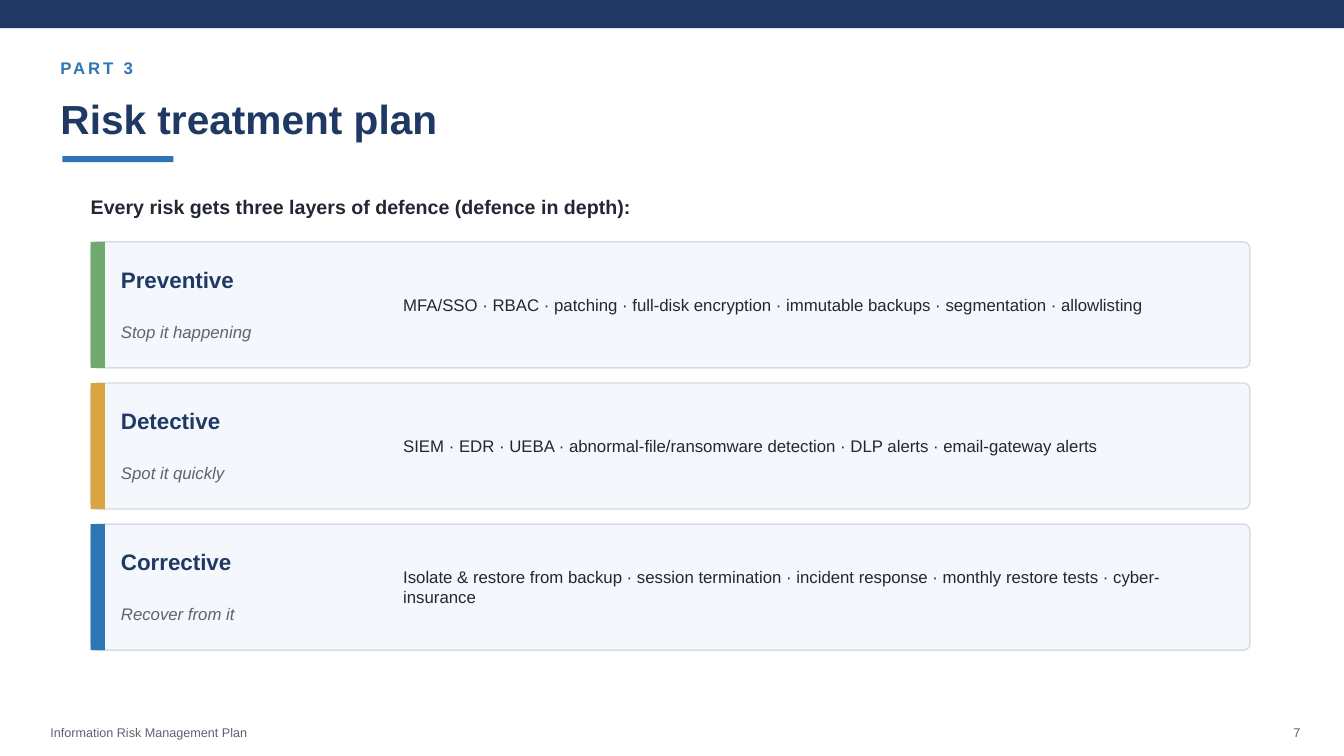
"""Build the risk treatment plan slide with its three layers of defence."""
import pptx
import pptx.dml.color
import pptx.enum.shapes
import pptx.enum.text
import pptx.util

Pt = pptx.util.Pt
RGBColor = pptx.dml.color.RGBColor
MSO_SHAPE = pptx.enum.shapes.MSO_SHAPE
PP_ALIGN = pptx.enum.text.PP_ALIGN

NAVY = RGBColor(0x1F, 0x38, 0x64)
BLUE = RGBColor(0x2E, 0x75, 0xB6)
GREEN = RGBColor(0x6F, 0xA9, 0x6B)
AMBER = RGBColor(0xD9, 0xA4, 0x41)
INK = RGBColor(0x22, 0x28, 0x33)
GREY = RGBColor(0x5B, 0x64, 0x72)
CARD_FILL = RGBColor(0xF4, 0xF7, 0xFC)
CARD_LINE = RGBColor(0xD5, 0xDC, 0xE6)

deck = pptx.Presentation()
deck.slide_width, deck.slide_height = Pt(960), Pt(540)
slide = deck.slides.add_slide(deck.slide_layouts[6])


def add_block(kind, left, top, width, height, fill):
    block = slide.shapes.add_shape(kind, Pt(left), Pt(top), Pt(width), Pt(height))
    block.shadow.inherit = False
    block.fill.solid()
    block.fill.fore_color.rgb = fill
    block.line.fill.background()
    return block


def add_text(words, left, top, width, height, color, align=PP_ALIGN.LEFT, **format_values):
    box = slide.shapes.add_textbox(Pt(left), Pt(top), Pt(width), Pt(height))
    frame_values = {
        "margin_left": 0, "margin_top": 0, "margin_right": 0, "margin_bottom": 0,
        "word_wrap": True,
        "auto_size": pptx.enum.text.MSO_AUTO_SIZE.SHAPE_TO_FIT_TEXT,
        "vertical_anchor": pptx.enum.text.MSO_ANCHOR.MIDDLE,
    }
    for name, value in frame_values.items():
        setattr(box.text_frame, name, value)
    paragraph = box.text_frame.paragraphs[0]
    paragraph.alignment = align
    run = paragraph.add_run()
    run.text = words
    for name, value in {"name": "Arial", **format_values}.items():
        setattr(run.font, name, value)
    run.font.color.rgb = color
    return box


add_block(MSO_SHAPE.RECTANGLE, 0, 0, 960, 20.16, NAVY)
part_label = add_text("PART 3", 43.2, 41.8, 864, 13.7, BLUE, size=Pt(12), bold=True)
part_label.element.xpath(".//a:rPr")[0].set("spc", "200")
add_text("Risk treatment plan", 43.2, 68.4, 871.2, 32.4, NAVY, size=Pt(29), bold=True)
add_block(MSO_SHAPE.RECTANGLE, 44.64, 111.6, 79.2, 4.32, BLUE)
add_text("Every risk gets three layers of defence (defence in depth):",
         64.8, 140, 828, 15.8, INK, size=Pt(14), bold=True)

layers = [
    ("Preventive", "Stop it happening", GREEN, 1,
     "MFA/SSO · RBAC · patching · full-disk encryption · immutable backups"
     " · segmentation · allowlisting"),
    ("Detective", "Spot it quickly", AMBER, 1,
     "SIEM · EDR · UEBA · abnormal-file/ransomware detection · DLP alerts"
     " · email-gateway alerts"),
    ("Corrective", "Recover from it", BLUE, 2,
     "Isolate & restore from backup · session termination · incident response"
     " · monthly restore tests · cyber-insurance"),
]
card_height, card_pitch, line_height = 90, 100.8, 13.7

for index, (layer, aim, accent, line_count, controls) in enumerate(layers):
    top = 172.8 + index * card_pitch
    card = add_block(MSO_SHAPE.ROUNDED_RECTANGLE, 64.8, top, 828, card_height, CARD_FILL)
    card.adjustments[0] = 0.05
    card.line.color.rgb = CARD_LINE
    card.line.width = Pt(1)
    add_block(MSO_SHAPE.RECTANGLE, 64.8, top, 10.08, card_height, accent)
    add_text(layer, 86.4, top + 18, 180, 17.3, NAVY, size=Pt(16), bold=True)
    add_text(aim, 86.4, top + 57, 180, line_height, GREY, size=Pt(12), italic=True)
    controls_height = line_count * line_height
    add_text(controls, 288, top + (card_height - controls_height) / 2, 590.4,
             controls_height, INK, size=Pt(12))

add_text("Information Risk Management Plan", 36, 518.4, 720, 10.1, GREY, size=Pt(9))
add_text("7", 892.8, 518.4, 36, 10.1, GREY, PP_ALIGN.RIGHT, size=Pt(9))

deck.save("out.pptx")
